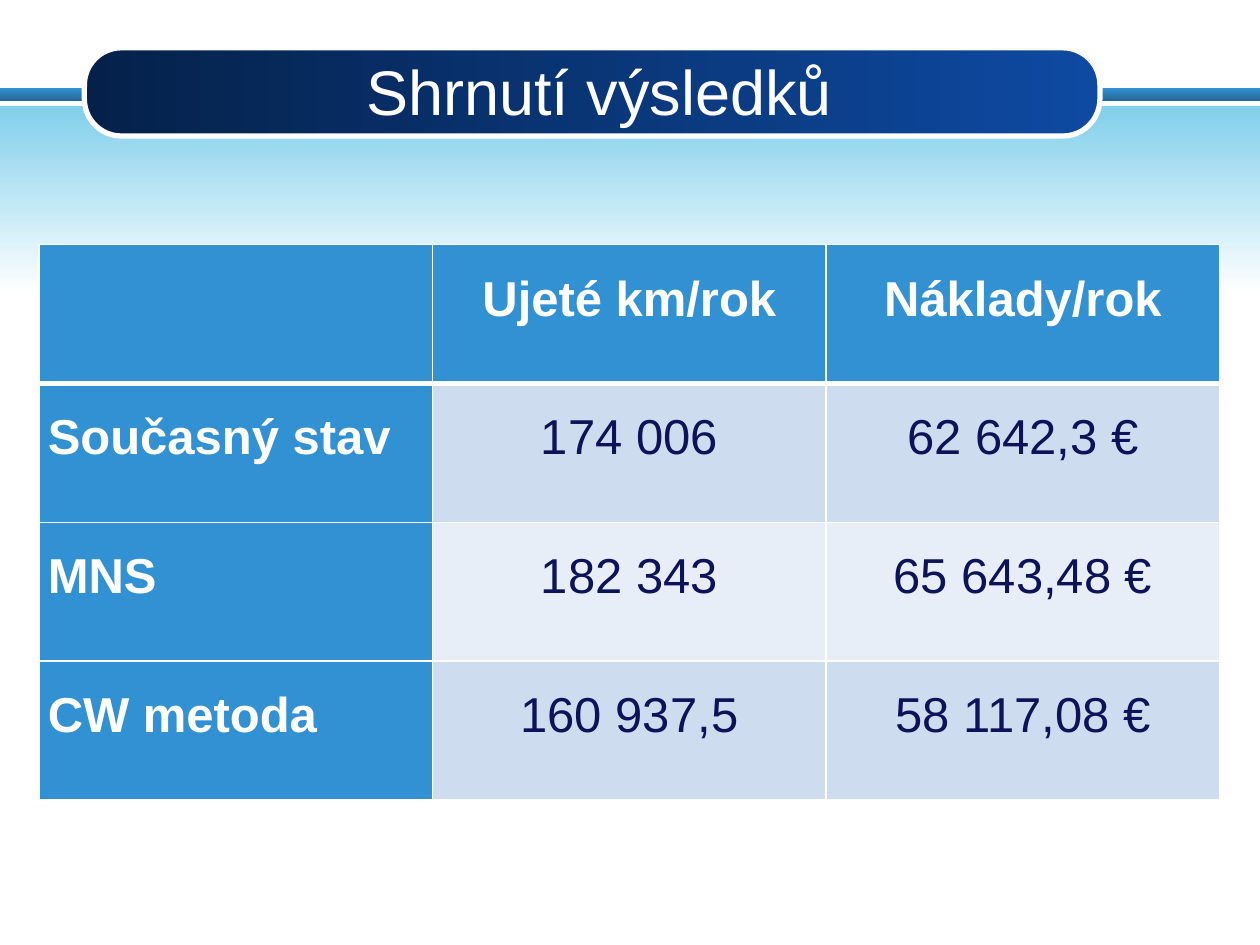
from lxml.etree import SubElement
from pptx import Presentation
from pptx.dml.color import RGBColor
from pptx.enum.shapes import MSO_SHAPE
from pptx.enum.text import MSO_ANCHOR, PP_ALIGN
from pptx.oxml.ns import qn
from pptx.util import Inches, Pt

COLORS = {
    "white": "FFFFFF",
    "blue": "3191D3",
    "bar_end": "236897",
    "sky": "81CFEB",
    "navy": "05214A",
    "royal": "0E4AA2",
    "ink": "0D1259",
    "band_dark": "CEDCEF",
    "band_light": "E8EEF7",
}
RESULTS = [
    ["", "Ujeté km/rok", "Náklady/rok"],
    ["Současný stav", "174 006", "62 642,3 €"],
    ["MNS", "182 343", "65 643,48 €"],
    ["CW metoda", "160 937,5", "58 117,08 €"],
]
DOWN, ACROSS = 270, 0


def rgb(name):
    return RGBColor.from_string(COLORS[name])


def apply_format(target, values):
    for attribute, value in values.items():
        setattr(target, attribute, value)


def set_font(paragraph, size, color, bold=False):
    apply_format(paragraph.font, {"name": "Arial", "size": Pt(size), "bold": bold})
    paragraph.font.color.rgb = rgb(color)


def add_gradient(slide, kind, box, ends, angle):
    panel = slide.shapes.add_shape(kind, *map(Inches, box))
    panel.shadow.inherit = False
    panel.fill.gradient()
    panel.fill.gradient_angle = angle
    for stop, color in zip(panel.fill.gradient_stops, ends):
        stop.color.rgb = rgb(color)
    panel.line.fill.background()
    return panel


def add_background(slide):
    # Thin bar with a fading sky below it
    add_gradient(slide, MSO_SHAPE.RECTANGLE, (0, 0.7, 10, 0.1), ("blue", "bar_end"), DOWN)
    add_gradient(slide, MSO_SHAPE.RECTANGLE, (0, 0.84, 10, 1.49), ("sky", "white"), DOWN)

    # Rounded plate behind the title
    plate = add_gradient(slide, MSO_SHAPE.ROUNDED_RECTANGLE, (0.67, 0.38, 8.06, 0.7),
                         ("navy", "royal"), ACROSS)
    plate.adjustments[0] = 0.42
    plate.line.color.rgb = rgb("white")
    plate.line.width = Pt(3)


def set_title(slide, text):
    title = slide.shapes.title
    apply_format(title, {"left": Inches(0.92), "top": Inches(0.41),
                         "width": Inches(7.67), "height": Inches(0.62)})
    title.text_frame.text = text
    title.text_frame.vertical_anchor = MSO_ANCHOR.MIDDLE
    heading = title.text_frame.paragraphs[0]
    heading.alignment = PP_ALIGN.CENTER
    set_font(heading, 36, "white")
    # Bring the title in front of its plate
    title._element.getparent().append(title._element)


def set_borders(cell, widths):
    properties = cell._tc.get_or_add_tcPr()
    for side, width in zip("LRTB", widths):
        line = SubElement(properties, qn(f"a:ln{side}"), w=str(Pt(width)))
        fill = SubElement(line, qn("a:solidFill"))
        SubElement(fill, qn("a:srgbClr"), val=COLORS["white"])


def format_cell(cell, text, row, column):
    is_label = row == 0 or column == 0
    set_borders(cell, (1, 1, 3 if row == 1 else 1, 3 if row == 0 else 1))
    cell.fill.solid()
    band = "band_dark" if row % 2 else "band_light"
    cell.fill.fore_color.rgb = rgb("blue" if is_label else band)
    apply_format(cell, {"margin_left": Inches(0.07), "margin_right": Inches(0.07),
                        "margin_top": 0, "margin_bottom": 0})
    cell.text = text
    paragraph = cell.text_frame.paragraphs[0]
    apply_format(paragraph, {
        "alignment": PP_ALIGN.CENTER if column else PP_ALIGN.JUSTIFY,
        "line_spacing": 1.5,
        "space_after": Pt(10),
    })
    set_font(paragraph, 28, "white" if is_label else "ink", is_label)


def add_results(slide):
    results = slide.shapes.add_table(
        len(RESULTS), len(RESULTS[0]),
        Inches(0.31), Inches(1.94), Inches(9.37), Inches(4.41)).table
    results.horz_banding = False
    for row, texts in enumerate(RESULTS):
        for column, text in enumerate(texts):
            format_cell(results.cell(row, column), text, row, column)


def main():
    deck = Presentation()
    deck.slide_width, deck.slide_height = Inches(10), Inches(7.5)
    slide = deck.slides.add_slide(deck.slide_layouts[5])
    add_background(slide)
    set_title(slide, "Shrnutí výsledků")
    add_results(slide)
    deck.save("out.pptx")


if __name__ == "__main__":
    main()
